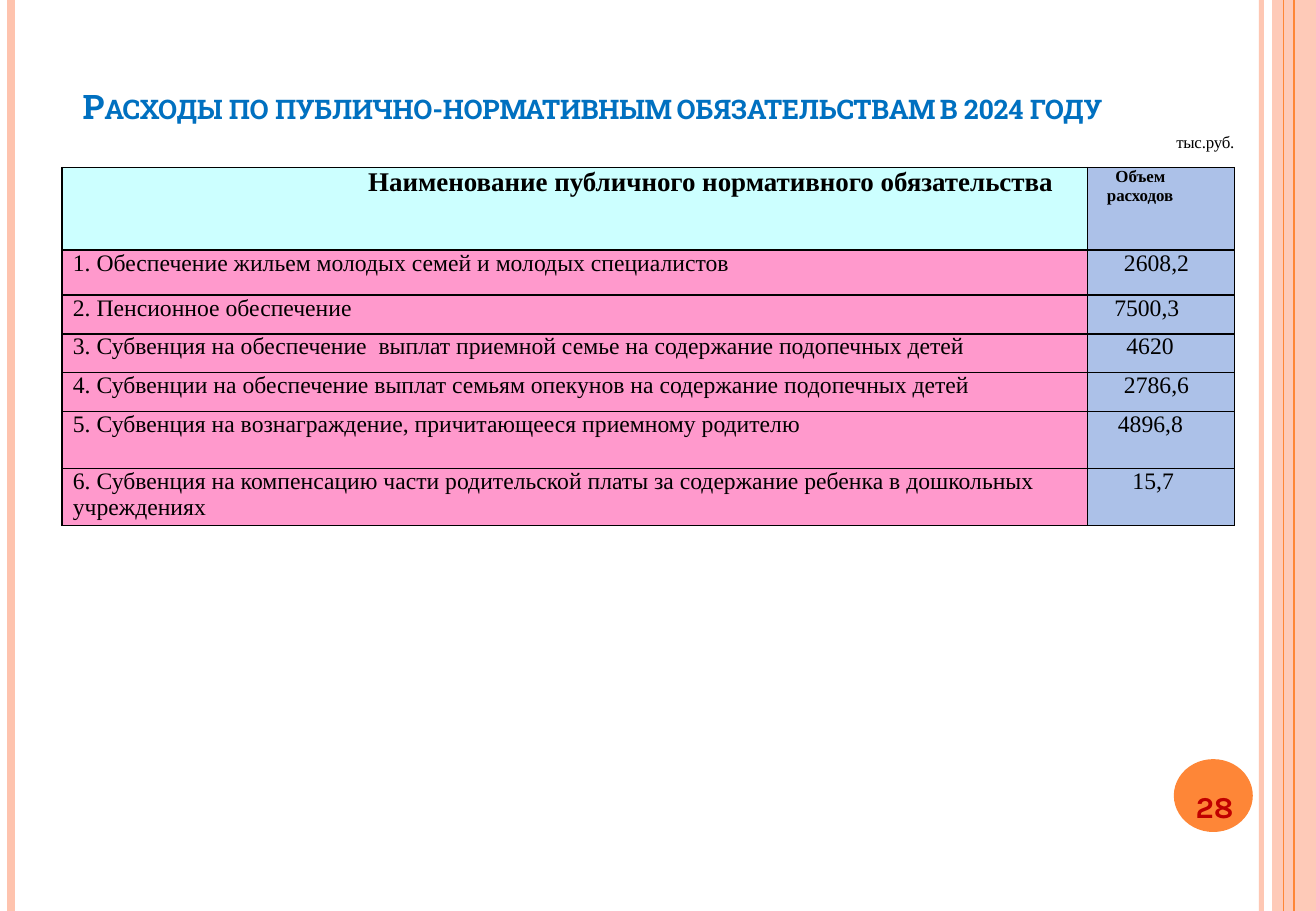
from lxml.etree import SubElement
from pptx import Presentation
from pptx.dml.color import RGBColor
from pptx.enum.shapes import MSO_CONNECTOR, MSO_SHAPE
from pptx.enum.text import MSO_ANCHOR, PP_ALIGN
from pptx.oxml.ns import qn
from pptx.util import Inches, Pt

PEACH = RGBColor(0xFE, 0xC3, 0xAE)
ORANGE = RGBColor(0xFE, 0x86, 0x37)
BLUE = RGBColor(0x00, 0x70, 0xC0)
RED = RGBColor(0xC0, 0x00, 0x00)
BLACK = RGBColor(0, 0, 0)
CYAN = RGBColor(0xCC, 0xFF, 0xFF)
PINK = RGBColor(0xFF, 0x99, 0xCC)
STEEL = RGBColor(0xAC, 0xC1, 0xE8)
WIDTH, HEIGHT = 10.83, 7.5
SERIF = "Times New Roman"

STRIPES = [(10.38, PEACH, 3, 93), (0.09, PEACH, 4.5, 100),
           (10.65, ORANGE, 1.5, 100), (10.56, ORANGE, 0.75, 100)]
HEADS = ["Наименование публичного нормативного обязательства", "Объем расходов"]
COLS = [8.44, 1.21]
HEAD_ROW = 0.68
ROWS = [
    ("1. Обеспечение жильем молодых семей и молодых специалистов", "2608,2", 0.3, 0.37),
    ("2. Пенсионное обеспечение", "7500,3", 0.22, 0.32),
    ("3. Субвенция на обеспечение  выплат приемной семье на содержание подопечных детей",
     "4620", 0.32, 0.32),
    ("4. Субвенции на обеспечение выплат семьям опекунов на содержание подопечных детей",
     "2786,6", 0.3, 0.32),
    ("5. Субвенция на вознаграждение, причитающееся приемному родителю", "4896,8", 0.25, 0.47),
    ("6. Субвенция на компенсацию части родительской платы за содержание ребенка "
     "в дошкольных учреждениях", "15,7", 0.37, 0.47),
]


def fade(part, alpha):
    """Set the opacity, in percent, of the solid colour inside an element."""
    color = next(part.iter(qn("a:srgbClr")))
    SubElement(color, qn("a:alpha"), val=str(alpha * 1000))


def write(frame, text, font, size, color, bold=False, left=0, first=0, gap=0):
    """Put one formatted paragraph in a text frame and return it."""
    frame.text = text
    frame.word_wrap = True
    para = frame.paragraphs[0]
    props = para._p.get_or_add_pPr()
    props.set("marL", str(Inches(left)))
    props.set("indent", str(Inches(first)))
    for run in para.runs:
        run.font.name, run.font.size, run.font.bold = font, Pt(size), bold
        run.font.color.rgb = color
        if gap:
            run.font._element.set("spc", str(gap))
    return para


def add_box(slide, left, top, width, height, inset=0):
    """Add a text box with only a top inset and return its frame."""
    box = slide.shapes.add_textbox(*map(Inches, (left, top, width, height)))
    frame = box.text_frame
    frame.margin_left = frame.margin_right = frame.margin_bottom = 0
    frame.margin_top = Inches(inset)
    return frame


def add_shape(slide, kind, color, left, top, width, height):
    """Add a plain filled shape without outline."""
    shape = slide.shapes.add_shape(kind, *map(Inches, (left, top, width, height)))
    shape.shadow.inherit = False
    shape.fill.solid()
    shape.fill.fore_color.rgb = color
    shape.line.fill.background()
    return shape


def add_stripe(slide, x, color, weight, alpha):
    """Draw one vertical line over the full slide height."""
    line = slide.shapes.add_connector(
        MSO_CONNECTOR.STRAIGHT, Inches(x), 0, Inches(x), Inches(HEIGHT))
    line.line.color.rgb = color
    line.line.width = Pt(weight)
    if alpha < 100:
        fade(line._element.spPr, alpha)
    SubElement(line._element.spPr, qn("a:effectLst"))


def add_frame(slide):
    """Draw the side stripes and the band on the right edge."""
    band = add_shape(slide, MSO_SHAPE.RECTANGLE, PEACH, 10.47, 0, WIDTH - 10.47, HEIGHT)
    fade(band._element.spPr, 87)
    for stripe in STRIPES:
        add_stripe(slide, *stripe)


def add_title(slide, left, top, width, height):
    """Write the heading in small capitals."""
    frame = add_box(slide, left, top, width, height, 0.41)
    frame.vertical_anchor = MSO_ANCHOR.BOTTOM
    para = write(frame, "Расходы по публично-нормативным обязательствам в 2024 году",
                 "Roboto Slab", 20, BLUE, True, left=0.36, gap=-10)
    para.runs[0].font._element.set("cap", "small")


def add_badge(slide, left, top, width, height):
    """Draw the round badge with the page number."""
    add_shape(slide, MSO_SHAPE.OVAL, ORANGE, left, top, width, height)
    frame = add_box(slide, left - 0.03, top + 0.08, 0.72, 0.46, 0.16)
    frame.vertical_anchor = MSO_ANCHOR.MIDDLE
    para = write(frame, "28", "Karla", 18, RED, True, left=0.01, gap=-10)
    para.alignment = PP_ALIGN.CENTER


def fill_cell(cell, color, text, size, **style):
    """Give a table cell its borders, fill and text."""
    cell.margin_left = cell.margin_right = cell.margin_top = cell.margin_bottom = 0
    props = cell._tc.get_or_add_tcPr()
    for side in ("lnL", "lnR", "lnT", "lnB"):
        edge = SubElement(props, qn("a:" + side), w=str(Pt(1)))
        paint = SubElement(edge, qn("a:solidFill"))
        SubElement(paint, qn("a:srgbClr"), val=str(BLACK))
    cell.fill.solid()
    cell.fill.fore_color.rgb = color
    write(cell.text_frame, text, SERIF, size, BLACK, **style)


def add_costs(slide, left, top):
    """Build the table of obligations with its unit note above."""
    width = sum(COLS)
    heights = [HEAD_ROW] + [row[3] for row in ROWS]
    note = add_box(slide, left + width - 0.49, top - 0.3, 0.52, 0.17)
    write(note, "тыс.руб.", SERIF, 10, BLACK, left=0.01, gap=-10)
    table = slide.shapes.add_table(
        len(heights), len(COLS), Inches(left), Inches(top),
        Inches(width), Inches(sum(heights))).table
    table.horz_banding = False
    for col, size in zip(table.columns, COLS):
        col.width = Inches(size)
    for row, size in zip(table.rows, heights):
        row.height = Inches(size)
    fill_cell(table.cell(0, 0), CYAN, HEADS[0], 16, bold=True, left=2.52)
    fill_cell(table.cell(0, 1), STEEL, HEADS[1], 10, bold=True, left=0.16, first=0.07)
    for i, (name, value, shift, _) in enumerate(ROWS, 1):
        fill_cell(table.cell(i, 0), PINK, name, 14, left=0.09)
        fill_cell(table.cell(i, 1), STEEL, value, 14, left=shift)


def main():
    """Build the slide and save it."""
    deck = Presentation()
    deck.slide_width, deck.slide_height = Inches(WIDTH), Inches(HEIGHT)
    slide = deck.slides.add_slide(deck.slide_layouts[6])
    add_frame(slide)
    add_badge(slide, 9.66, 6.25, 0.65, 0.6)
    add_title(slide, 0.32, 0.25, 10.01, 0.75)
    add_costs(slide, 0.51, 1.38)
    deck.save("out.pptx")


if __name__ == "__main__":
    main()
